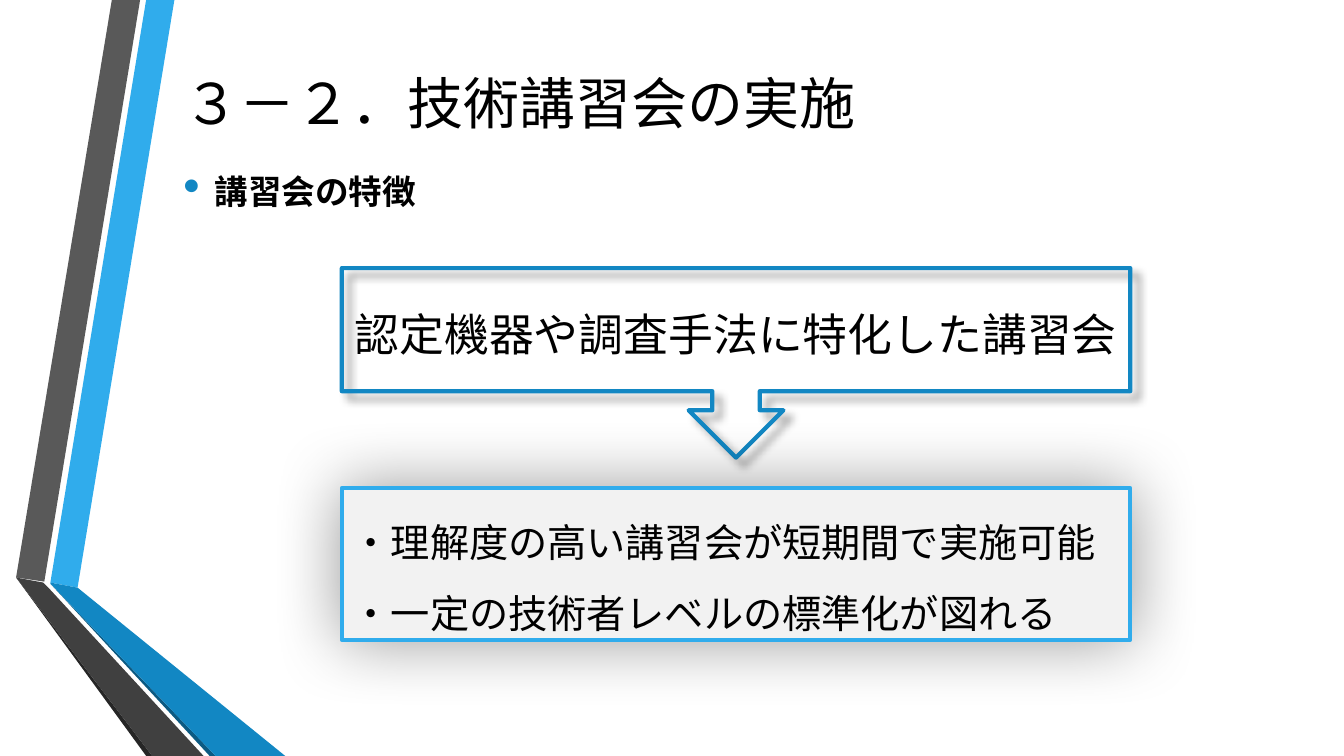
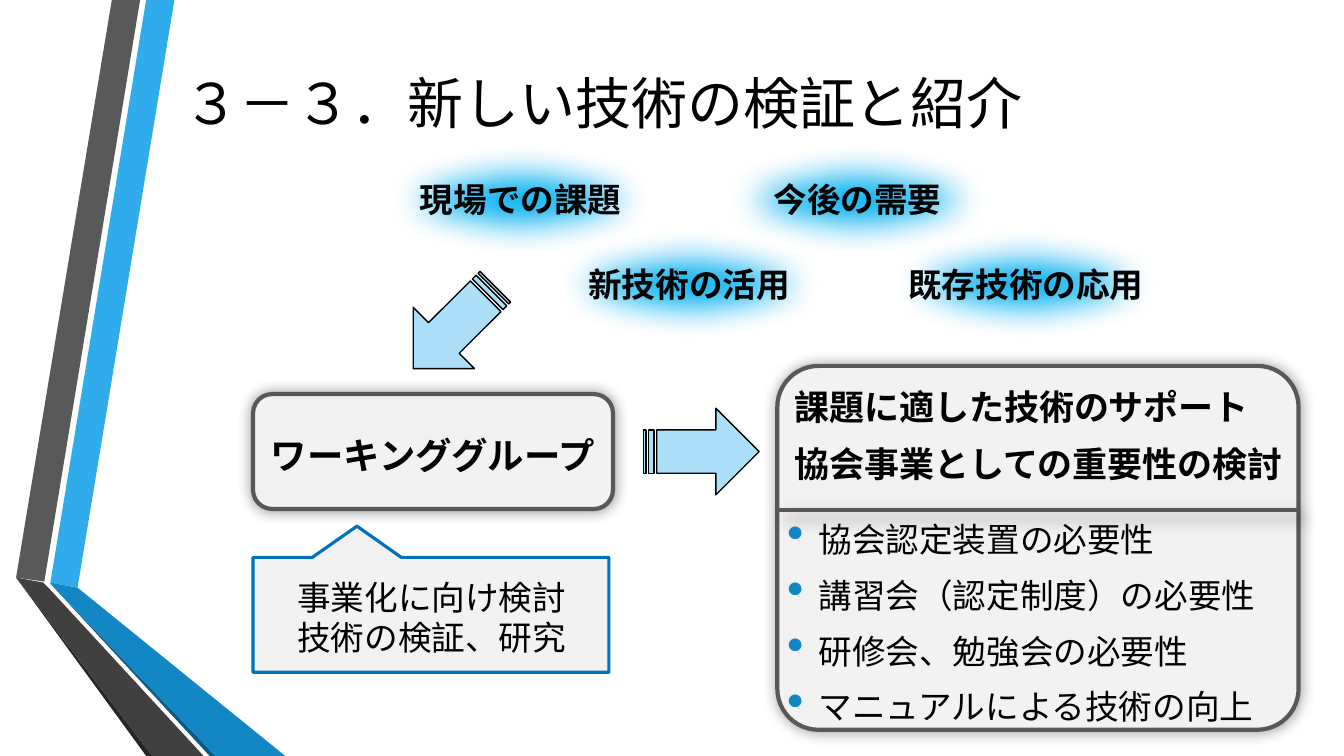
from dataclasses import dataclass, field
from typing import Optional

from lxml import etree
from pptx import Presentation
from pptx.dml.color import RGBColor
from pptx.enum.shapes import MSO_CONNECTOR, MSO_SHAPE
from pptx.enum.text import MSO_ANCHOR, PP_ALIGN
from pptx.oxml.ns import qn
from pptx.util import Inches, Pt

LEFT, MID = PP_ALIGN.LEFT, PP_ALIGN.CENTER
TOP, CENTER = MSO_ANCHOR.TOP, MSO_ANCHOR.MIDDLE
RECT, ROUND, OVAL = MSO_SHAPE.RECTANGLE, MSO_SHAPE.ROUNDED_RECTANGLE, MSO_SHAPE.OVAL
DOWN, WEDGE = MSO_SHAPE.DOWN_ARROW_CALLOUT, MSO_SHAPE.RECTANGULAR_CALLOUT
STRIPE = MSO_SHAPE.STRIPED_RIGHT_ARROW
STRAIGHT = MSO_CONNECTOR.STRAIGHT

FONT = "Noto Sans CJK JP"
COLORS = {
    "black": "000000", "pale": "F2F2F2", "gray": "585858",
    "band": "595959", "dark": "404040", "edge": "262626",
    "sky": "30ACEC", "blue": "1287C3", "navy": "0C5A82",
    "cyan": "00B0F0", "note": "0070C0", "ice": "ACDEF7",
}
BANDS = [
    ("sky", [(0.5, 5.78), (0.77, 5.83), (1.73, 0), (1.45, 0)]),
    ("band", [(1.39, 0), (1.11, 0), (0.16, 5.73), (0.44, 5.77)]),
    ("edge", [(0.16, 5.73), (1.45, 7.5), (1.51, 7.5)]),
    ("navy", [(0.5, 5.79), (2.08, 7.5), (2.14, 7.5)]),
    ("blue", [(0.5, 5.79), (2.14, 7.5), (2.83, 7.5), (0.77, 5.83), (0.5, 5.78)]),
    ("dark", [(2.02, 7.5), (0.48, 5.83), (0.43, 5.78), (0.16, 5.73), (1.51, 7.5)]),
]


@dataclass
class Glow:
    blur: float
    dist: float = 0
    angle: int = 0


@dataclass
class Box:
    kind: int
    at: tuple
    line: str
    width: float
    fill: Optional[str] = None
    adj: list = field(default_factory=list)
    glow: Optional[Glow] = None
    soft: float = 0
    turn: float = 0


@dataclass
class Text:
    lines: list
    size: float
    at: tuple = ()
    bold: bool = False
    align: int = LEFT
    anchor: int = TOP
    pitch: float = 1.2
    after: float = 0
    bullet: bool = False


def color(name: str) -> RGBColor:
    return RGBColor.from_string(COLORS[name])


def add_glow(props, glow: Optional[Glow], soft: float = 0) -> None:
    fx = props.find(qn("a:effectLst"))
    if fx is None:
        fx = etree.SubElement(props, qn("a:effectLst"))
    if glow:
        shade = etree.SubElement(
            fx, qn("a:outerShdw"), blurRad=str(Pt(glow.blur)), dist=str(Pt(glow.dist)),
            dir=str(glow.angle * 60000), algn="ctr", rotWithShape="0")
        tint = etree.SubElement(shade, qn("a:srgbClr"), val=COLORS["black"])
        etree.SubElement(tint, qn("a:alpha"), val="40000")
    if soft:
        etree.SubElement(fx, qn("a:softEdge"), rad=str(Pt(soft)))


def add_box(slide, box: Box):
    shape = slide.shapes.add_shape(box.kind, *map(Inches, box.at))
    shape.rotation = box.turn
    for i, value in enumerate(box.adj):
        shape.adjustments[i] = value
    if box.fill:
        shape.fill.solid()
        shape.fill.fore_color.rgb = color(box.fill)
    else:
        shape.fill.background()
    shape.line.color.rgb = color(box.line)
    shape.line.width = Pt(box.width)
    shape.shadow.inherit = False
    add_glow(shape.element.spPr, box.glow, box.soft)
    return shape


def add_bullet(para) -> None:
    props = para._p.get_or_add_pPr()
    props.set("marL", str(Inches(0.31)))
    props.set("indent", str(-Inches(0.31)))
    tint = etree.SubElement(props, qn("a:buClr"))
    etree.SubElement(tint, qn("a:srgbClr"), val=COLORS["blue"])
    etree.SubElement(props, qn("a:buSzPct"), val="145000")
    etree.SubElement(props, qn("a:buChar"), char="•")


def write(shape, text: Text) -> None:
    frame = shape.text_frame
    look = {"word_wrap": True, "vertical_anchor": text.anchor,
            "margin_left": Inches(0.1), "margin_right": Inches(0.1),
            "margin_top": Inches(0.08), "margin_bottom": Inches(0.05)}
    for key, value in look.items():
        setattr(frame, key, value)
    style = {"alignment": text.align, "line_spacing": Pt(text.size * text.pitch),
             "space_before": Pt(0), "space_after": Pt(text.after)}
    face = {"name": FONT, "size": Pt(text.size), "bold": text.bold}
    for i, line in enumerate(text.lines):
        para = frame.add_paragraph() if i else frame.paragraphs[0]
        for key, value in style.items():
            setattr(para, key, value)
        if text.bullet:
            add_bullet(para)
        run = para.add_run()
        run.text = line
        for key, value in face.items():
            setattr(run.font, key, value)
        run.font.color.rgb = color("black")
        etree.SubElement(run._r.get_or_add_rPr(), qn("a:ea"), typeface=FONT)


def add_text(slide, text: Text) -> None:
    write(slide.shapes.add_textbox(*map(Inches, text.at)), text)


def add_bands(slide, layout) -> None:
    for name, points in BANDS:
        dots = [(round(x * 100), round(y * 100)) for x, y in points]
        path = slide.shapes.build_freeform(*dots[0], scale=Inches(0.01))
        path.add_line_segments(dots[1:], close=True)
        band = path.convert_to_shape()
        band.fill.solid()
        band.fill.fore_color.rgb = color(name)
        band.line.fill.background()
        band.shadow.inherit = False
        layout.shapes.element.append(band.element)


def add_slide(deck, layout, title: str):
    slide = deck.slides.add_slide(layout)
    head = slide.shapes.title
    place = {"left": 1.72, "top": 0.44, "width": 10.86, "height": 0.98}
    for key, value in place.items():
        setattr(head, key, Inches(value))
    write(head, Text([title], 40, anchor=CENTER, pitch=1.45))
    return slide


def fill_course(slide) -> None:
    add_box(slide, Box(DOWN, (3.39, 2.66, 7.82, 1.88), "blue", 3, glow=Glow(6, 7, 45)))
    add_text(slide, Text(["講習会の特徴"], 24, (1.72, 1.42, 10.86, 0.95),
                         bold=True, pitch=1.8, bullet=True))
    add_text(slide, Text(["認定機器や調査手法に特化した講習会"], 32, (3.39, 2.66, 7.82, 1.23),
                         align=MID, anchor=CENTER, pitch=1.3))
    gain = add_box(slide, Box(RECT, (3.39, 4.84, 7.82, 1.51), "sky", 2.75, "pale",
                              glow=Glow(50)))
    write(gain, Text(["・理解度の高い講習会が短期間で実施可能", "・一定の技術者レベルの標準化が図れる"],
                     28, anchor=CENTER, pitch=1.8))


def fill_study(slide) -> None:
    needs = ["現場での課題", "新技術の活用", "今後の需要", "既存技術の応用"]
    spots = [(3.5 + 1.67 * i, 1.43 + 0.84 * (i % 2)) for i in range(len(needs))]
    boxes = [Box(OVAL, (x, y, 3.33, 1.1), "cyan", 6, "cyan", soft=25) for x, y in spots]
    boxes += [
        Box(ROUND, (7.71, 3.63, 5.17, 3.61), "gray", 3, "pale", [0.113], Glow(10)),
        Box(WEDGE, (2.51, 5.53, 3.53, 1.14), "note", 2.25, "pale", [-0.208, -0.772]),
        Box(ROUND, (2.51, 3.91, 3.57, 1.14), "gray", 3, "pale", glow=Glow(10)),
        Box(STRIPE, (6.38, 4.05, 1.15, 0.86), "black", 1, "ice"),
        Box(STRIPE, (3.93, 2.82, 1.15, 0.86), "black", 1, "ice", turn=135),
    ]
    for box in boxes:
        add_box(slide, box)
    rule = slide.shapes.add_connector(STRAIGHT, *map(Inches, (7.71, 5.06, 12.88, 5.06)))
    rule.line.color.rgb = color("gray")
    rule.line.width = Pt(2.5)
    add_glow(rule.element.spPr, Glow(11, 7, 45))
    texts = [Text([need], 24, (x, y + 0.27, 3.33, 0.5), bold=True, align=MID)
             for need, (x, y) in zip(needs, spots)]
    texts += [
        Text(["事業化に向け検討", "技術の検証、研究"], 24, (2.85, 5.64, 2.9, 0.91)),
        Text(["課題に適した技術のサポート", "協会事業としての重要性の検討"], 25,
             (7.78, 3.74, 5.22, 1.17), bold=True, after=11),
        Text(["ワーキンググループ"], 26, (2.51, 4.22, 3.57, 0.54), bold=True, align=MID),
        Text(["協会認定装置の必要性", "講習会（認定制度）の必要性", "研修会、勉強会の必要性",
              "マニュアルによる技術の向上"], 24, (7.71, 5.07, 5.17, 2.34),
             after=11, bullet=True),
    ]
    for text in texts:
        add_text(slide, text)


def main() -> None:
    deck = Presentation()
    deck.slide_width, deck.slide_height = Inches(13.33), Inches(7.5)
    layout = deck.slide_layouts[5]
    course = add_slide(deck, layout, "３－２．技術講習会の実施")
    add_bands(course, layout)
    fill_course(course)
    fill_study(add_slide(deck, layout, "３－３．新しい技術の検証と紹介"))
    deck.save("out.pptx")


if __name__ == "__main__":
    main()
